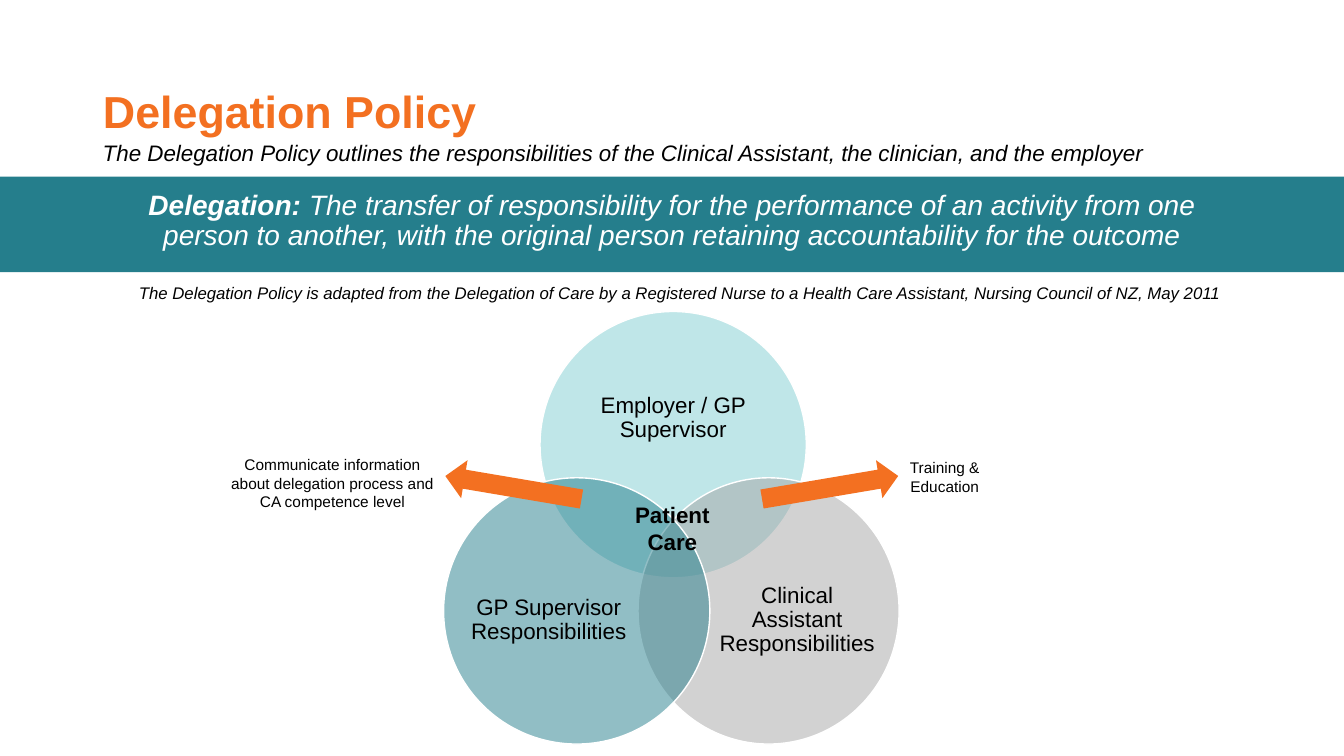
from dataclasses import dataclass

from lxml.etree import SubElement
from pptx import Presentation
from pptx.dml.color import RGBColor
from pptx.enum.shapes import MSO_SHAPE
from pptx.enum.text import MSO_ANCHOR, PP_ALIGN
from pptx.oxml.ns import qn
from pptx.util import Cm, Pt


@dataclass(frozen=True)
class Theme:
    """Colours, font and type sizes of the slide."""
    font: str = "Arial"
    orange: str = "F37021"
    teal: str = "257E8C"
    aqua: str = "80CFD3"
    grey: str = "A6A6A6"
    white: str = "FFFFFF"
    black: str = "000000"
    title: int = 32
    definition: int = 20
    body: int = 16
    citation: int = 12
    note: int = 11


@dataclass(frozen=True)
class Box:
    """A rectangle in centimetres."""
    left: float
    top: float
    width: float
    height: float

    def inner(self, left, top, width, height):
        """Return a box placed relative to this one."""
        return Box(self.left + left, self.top + top, width, height)

    def lengths(self):
        """Return the position and size as lengths."""
        return Cm(self.left), Cm(self.top), Cm(self.width), Cm(self.height)


THEME = Theme()


def add_run(paragraph, words, size, color=THEME.black, bold=False, italic=False):
    """Append one formatted run."""
    run = paragraph.add_run()
    run.text = words
    run.font.name = THEME.font
    run.font.size = Pt(size)
    run.font.color.rgb = RGBColor.from_string(color)
    run.font.bold = bold
    run.font.italic = italic


def add_text(slide, box, align=PP_ALIGN.CENTER, spacing=1.0, anchor=MSO_ANCHOR.TOP, inset=None):
    """Add a wrapping text box and return its paragraph."""
    frame = slide.shapes.add_textbox(*box.lengths()).text_frame
    frame.word_wrap = True
    frame.vertical_anchor = anchor
    if inset is not None:
        frame.margin_left = frame.margin_right = Cm(inset)
        frame.margin_top = frame.margin_bottom = Cm(inset)
    paragraph = frame.paragraphs[0]
    paragraph.alignment = align
    paragraph.line_spacing = spacing
    return paragraph


def add_filled(slide, preset, box, color):
    """Add a flat filled shape without an outline."""
    shape = slide.shapes.add_shape(preset, *box.lengths())
    shape.shadow.inherit = False
    shape.fill.solid()
    shape.fill.fore_color.rgb = RGBColor.from_string(color)
    shape.line.fill.background()
    return shape


def add_circle(slide, box, color):
    """Add a half-transparent circle with a white outline."""
    circle = add_filled(slide, MSO_SHAPE.OVAL, box, color)
    tint = circle.element.spPr.find(qn("a:solidFill")).find(qn("a:srgbClr"))
    SubElement(tint, qn("a:alpha"), val="50000")
    circle.line.color.rgb = RGBColor.from_string(THEME.white)
    circle.line.width = Pt(1)


def build_header(slide, box):
    """Place the title and the sentence under it."""
    title = slide.shapes.title
    title.left, title.top, title.width, title.height = box.lengths()
    title.text_frame.vertical_anchor = MSO_ANCHOR.MIDDLE
    heading = title.text_frame.paragraphs[0]
    heading.alignment = PP_ALIGN.LEFT
    heading.line_spacing = 0.9
    add_run(heading, "Delegation Policy", THEME.title, THEME.orange, bold=True)
    summary = add_text(slide, box.inner(0, 2.21, box.width, 1.32), PP_ALIGN.LEFT, 0.9, MSO_ANCHOR.MIDDLE)
    add_run(summary, "The Delegation Policy outlines the responsibilities of the Clinical Assistant, "
            "the clinician, and the employer", THEME.body, italic=True)


def build_definition(slide, box):
    """Place the band with the definition and the citation below it."""
    add_filled(slide, MSO_SHAPE.RECTANGLE, box, THEME.teal)
    definition = add_text(slide, box.inner(2.34, 0.25, 29.21, 3.68), spacing=0.9)
    add_run(definition, "Delegation: ", THEME.definition, THEME.white, bold=True, italic=True)
    add_run(definition, "The transfer of responsibility for the performance of an activity from one person "
            "to another, with the original person retaining accountability for the outcome",
            THEME.definition, THEME.white, italic=True)
    citation = add_text(slide, box.inner(3.25, 2.56, 27.89, 0.76), PP_ALIGN.LEFT)
    add_run(citation, "The Delegation Policy is adapted from the Delegation of Care by a Registered Nurse "
            "to a Health Care Assistant, Nursing Council of NZ, May 2011", THEME.citation, italic=True)


def build_responsibilities(slide, box):
    """Place the overlapping circles, their arrows and the notes."""
    roles = [
        ("Employer / GP Supervisor", THEME.aqua, (8.05, 0, 6.71, 6.71), (8.94, 1.17, 4.93, 3.02)),
        ("Clinical Assistant Responsibilities", THEME.grey, (10.52, 4.19, 6.58, 6.71), (12.55, 5.94, 3.96, 3.68)),
        ("GP Supervisor Responsibilities", THEME.teal, (5.62, 4.19, 6.71, 6.71), (6.25, 5.94, 4.04, 3.68)),
    ]
    for role, color, circle, label in roles:
        add_circle(slide, box.inner(*circle), color)
        paragraph = add_text(slide, box.inner(*label), spacing=0.9, anchor=MSO_ANCHOR.MIDDLE, inset=0)
        add_run(paragraph, role, THEME.body)

    notes = [
        ("Training & Education", (16.84, 3.58, 2.82, 1.19), MSO_SHAPE.RIGHT_ARROW, 13.62, -9.6),
        ("Communicate information about delegation process and CA competence level",
         (0, 3.5, 5.64, 1.68), MSO_SHAPE.LEFT_ARROW, 5.64, 9.6),
    ]
    for note, place, arrow, arrow_left, tilt in notes:
        add_run(add_text(slide, box.inner(*place)), note, THEME.note)
        pointer = add_filled(slide, arrow, box.inner(arrow_left, 3.95, 3.48, 0.97), THEME.orange)
        pointer.rotation = tilt

    shared_goal = add_text(slide, box.inner(10.14, 4.65, 2.49, 1.63))
    add_run(shared_goal, "Patient Care", THEME.body, bold=True)


def main():
    """Build and save the slide."""
    deck = Presentation()
    deck.slide_width, deck.slide_height = Cm(33.87), Cm(19.05)
    slide = deck.slides.add_slide(deck.slide_layouts[5])
    build_definition(slide, Box(0, 4.45, 33.87, 2.41))
    build_header(slide, Box(2.34, 1.02, 29.21, 3.68))
    build_responsibilities(slide, Box(5.56, 7.85, 19.66, 10.9))
    deck.save("out.pptx")


if __name__ == "__main__":
    main()
